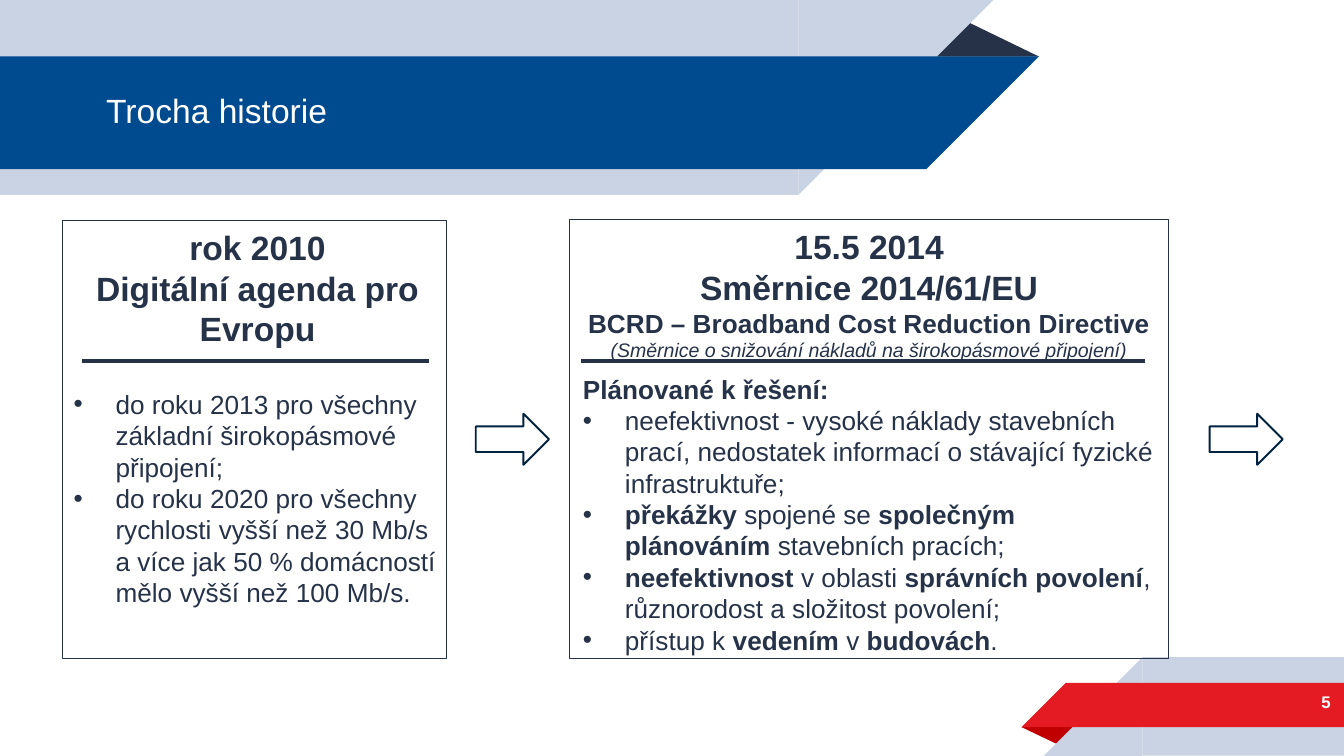
"""Build the history slide with two milestone panels."""
from dataclasses import dataclass
from typing import Any

from lxml import etree
from pptx import Presentation
from pptx.dml.color import RGBColor
from pptx.enum import shapes, text
from pptx.oxml.ns import qn
from pptx.util import Pt

KIND = shapes.MSO_SHAPE
ALIGN = text.PP_ALIGN
MID = text.MSO_ANCHOR.MIDDLE
TOP = text.MSO_ANCHOR.TOP


@dataclass(frozen=True)
class Theme:
    font: str = "Arial"
    ink: str = "263248"
    blue: str = "004B8F"
    pale: str = "CAD3E3"
    red: str = "E41B23"
    dark: str = "C00000"
    edge: str = "00213F"
    white: str = "FFFFFF"
    head: float = 18
    body: float = 14
    note: float = 10.5
    page: float = 9


@dataclass(frozen=True)
class Box:
    x: float
    y: float
    w: float
    h: float


@dataclass(frozen=True)
class Band:
    x: float
    y: float
    h: float
    fill: str
    top: bool


@dataclass(frozen=True)
class Para:
    text: str
    size: float
    bold: bool = False
    note: str = ""
    mid: bool = False
    dot: bool = False
    gap: float = 0


@dataclass(frozen=True)
class Panel:
    box: Box
    left: float
    right: float
    rule: tuple[float, float]
    paras: tuple[Para, ...]


T = Theme()
WIDE, TALL = 720, 405
RULE_Y = 193.5
BANDS = (Band(427.7, 0, 104.4, T.pale, True), Band(496.1, 30.2, 60.5, T.blue, True),
         Band(612, 352.1, 52.8, T.pale, False), Band(571, 365.8, 23.8, T.red, False))
ARROWS = (Box(254.9, 221.6, 39.2, 27.4), Box(648, 221.6, 39.2, 27.4))
PANELS = (
    Panel(Box(33.6, 118.1, 205.8, 234.7), 5.8, 2.9, (43.9, 229.7), (
        Para("rok 2010", T.head, bold=True, mid=True),
        Para("Digitální agenda pro Evropu", T.head, bold=True, mid=True),
        Para("do roku 2013 pro všechny základní širokopásmové připojení;",
             T.body, dot=True, gap=21.5),
        Para("do roku 2020 pro všechny rychlosti vyšší než 30 Mb/s a více jak "
             "50 % domácností mělo vyšší než 100 Mb/s.", T.body, dot=True))),
    Panel(Box(305.1, 117.6, 321, 235.2), 7.2, 7.2, (311.2, 613.4), (
        Para("15.5 2014", T.head, bold=True, mid=True),
        Para("Směrnice 2014/61/EU", T.head, bold=True, mid=True),
        Para("BCRD – Broadband Cost Reduction Directive ", T.body, bold=True, mid=True,
             note="(Směrnice o snižování nákladů na širokopásmové připojení)"),
        Para("Plánované k řešení:", T.body, bold=True, gap=6),
        Para("neefektivnost - vysoké náklady stavebních prací, nedostatek informací "
             "o stávající fyzické infrastruktuře;", T.body, dot=True),
        Para("*překážky* spojené se *společným plánováním* stavebních pracích;",
             T.body, dot=True),
        Para("*neefektivnost* v oblasti *správních povolení*, různorodost a složitost "
             "povolení;", T.body, dot=True),
        Para("přístup k *vedením* v *budovách*.", T.body, dot=True))),
)


def tint(code: str) -> RGBColor:
    return RGBColor.from_string(code)


def place(item: Any, box: Box) -> None:
    item.left, item.top, item.width, item.height = map(Pt, (box.x, box.y, box.w, box.h))


def shape(slide: Any, kind: Any, box: Box, *, fill: str = "", line: str = "",
          turn: float = 0, flip: bool = False) -> Any:
    item = slide.shapes.add_shape(kind, *map(Pt, (box.x, box.y, box.w, box.h)))
    item.shadow.inherit = False
    item.rotation = turn
    if flip:
        item.element.spPr.find(qn("a:xfrm")).set("flipH", "1")
    if fill:
        item.fill.solid()
        item.fill.fore_color.rgb = tint(fill)
    else:
        item.fill.background()
    if line:
        item.line.color.rgb = tint(line)
        item.line.width = Pt(1)
    else:
        item.line.fill.background()
    return item


def band(slide: Any, spec: Band) -> None:
    turn = 180 if spec.top else 0
    start, end = (0, spec.x) if spec.top else (spec.x, WIDE)
    tip = spec.x if spec.top else spec.x - spec.h
    shape(slide, KIND.RECTANGLE, Box(start, spec.y, end - start, spec.h), fill=spec.fill)
    shape(slide, KIND.RIGHT_TRIANGLE, Box(tip, spec.y, spec.h, spec.h),
          fill=spec.fill, turn=turn, flip=True)


def fold(slide: Any, box: Box, fill: str, turn: float) -> None:
    item = shape(slide, KIND.ISOSCELES_TRIANGLE, box, fill=fill, turn=turn)
    item.adjustments[0] = 0.32


def frame(item: Any, anchor: Any, left: float = 7.2, right: float = 7.2) -> Any:
    area = item.text_frame
    area.word_wrap = True
    area.auto_size = text.MSO_AUTO_SIZE.NONE
    area.vertical_anchor = anchor
    area.margin_left, area.margin_right = Pt(left), Pt(right)
    area.margin_top = area.margin_bottom = Pt(3.6)
    return area


def write(para: Any, words: str, *, size: float, color: str = T.ink, bold: bool = False,
          note: str = "", align: Any = ALIGN.LEFT, dot: bool = False,
          gap: float = 0, space: float = 1.0) -> None:
    props = para._p.get_or_add_pPr()
    props.set("marL", str(Pt(22.5) if dot else 0))
    props.set("indent", str(Pt(-22.5) if dot else 0))
    if dot:
        etree.SubElement(props, qn("a:buFont")).set("typeface", T.font)
        etree.SubElement(props, qn("a:buChar")).set("char", "•")
    else:
        etree.SubElement(props, qn("a:buNone"))
    para.alignment, para.line_spacing = align, space
    para.space_before, para.space_after = Pt(gap), Pt(0)
    parts = [(part, size, bold or i % 2 == 1, False)
             for i, part in enumerate(words.split("*"))]
    for part, points, heavy, slant in parts + [(note, T.note, False, True)]:
        if part:
            run = para.add_run()
            run.text = part
            run.font.name, run.font.size = T.font, Pt(points)
            run.font.bold, run.font.italic = heavy, slant
            run.font.color.rgb = tint(color)


def panel(slide: Any, item: Any, spec: Panel) -> None:
    place(item, spec.box)
    slide.shapes._spTree.append(item.element)
    item.line.color.rgb = tint(T.ink)
    item.line.width = Pt(0.75)
    area = frame(item, TOP, spec.left, spec.right)
    for i, para in enumerate(spec.paras):
        write(area.add_paragraph() if i else area.paragraphs[0], para.text,
              size=para.size, bold=para.bold, note=para.note, dot=para.dot,
              align=ALIGN.CENTER if para.mid else ALIGN.LEFT, gap=para.gap)


def rule(slide: Any, start: float, end: float) -> None:
    line = slide.shapes.add_connector(shapes.MSO_CONNECTOR.STRAIGHT,
                                      Pt(start), Pt(RULE_Y), Pt(end), Pt(RULE_Y))
    line.line.color.rgb = tint(T.ink)
    line.line.width = Pt(2.25)
    etree.SubElement(line.element.spPr, qn("a:effectLst"))


def main() -> None:
    deck = Presentation()
    deck.slide_width, deck.slide_height = Pt(WIDE), Pt(TALL)
    slide = deck.slides.add_slide(deck.slide_layouts[3])
    title, *bodies = slide.placeholders
    fold(slide, Box(495.4, 10.1, 61.2, 20.2), T.ink, 0)
    fold(slide, Box(547.2, 389.5, 31, 10.1), T.dark, 180)
    for spec in BANDS:
        band(slide, spec)
    place(title, Box(49.7, 30.2, 489.6, 60.5))
    slide.shapes._spTree.append(title.element)
    write(frame(title, MID).paragraphs[0], "Trocha historie", size=T.head,
          color=T.white, space=0.9)
    page = slide.shapes.add_textbox(Pt(644.4), Pt(365), Pt(75.6), Pt(21.6))
    write(frame(page, MID).paragraphs[0], "5", size=T.page, color=T.white,
          bold=True, align=ALIGN.RIGHT)
    for item, spec in zip(bodies, PANELS):
        panel(slide, item, spec)
    for box in ARROWS:
        shape(slide, KIND.RIGHT_ARROW, box, line=T.edge)
    for spec in PANELS:
        rule(slide, *spec.rule)
    deck.save("out.pptx")


if __name__ == "__main__":
    main()
